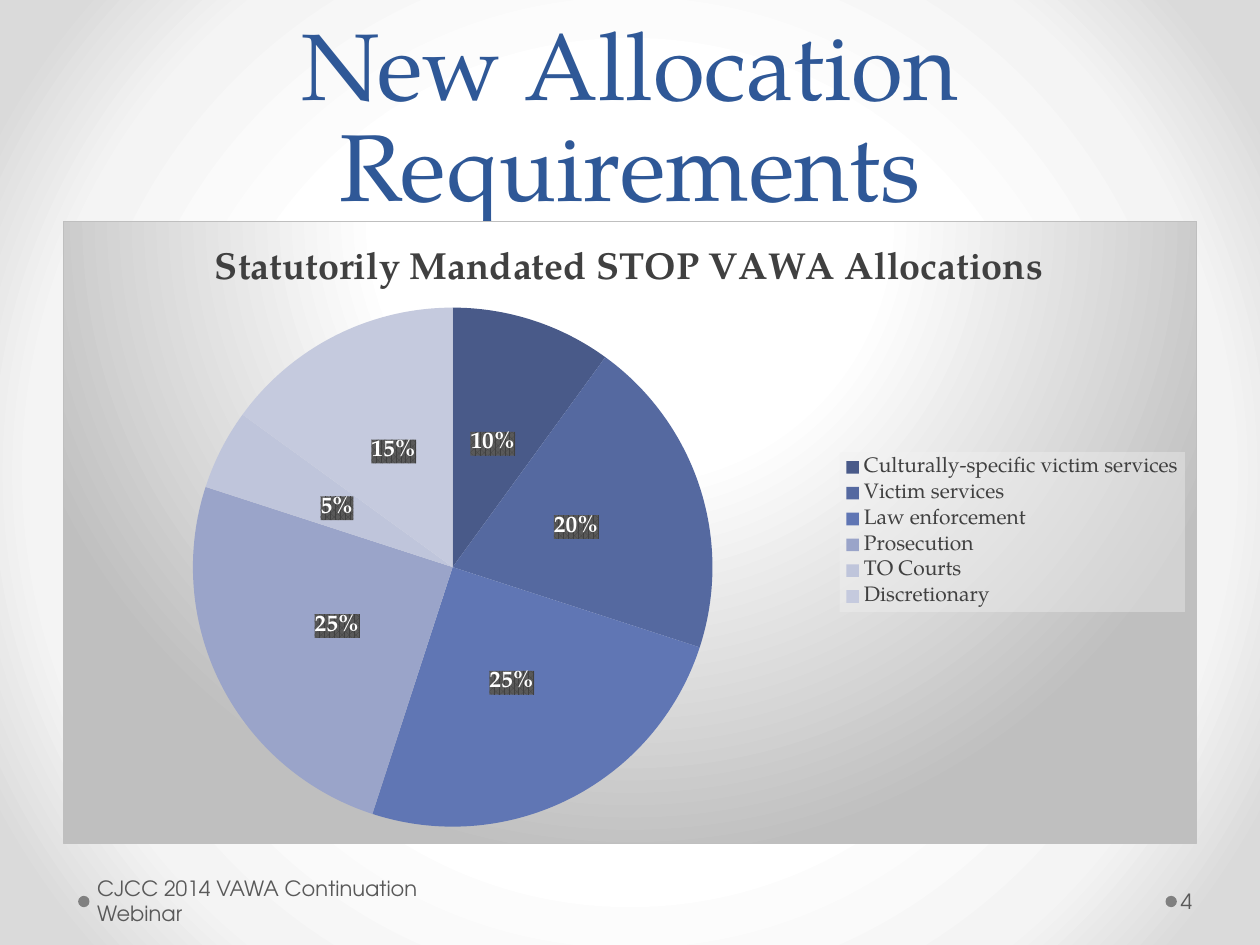
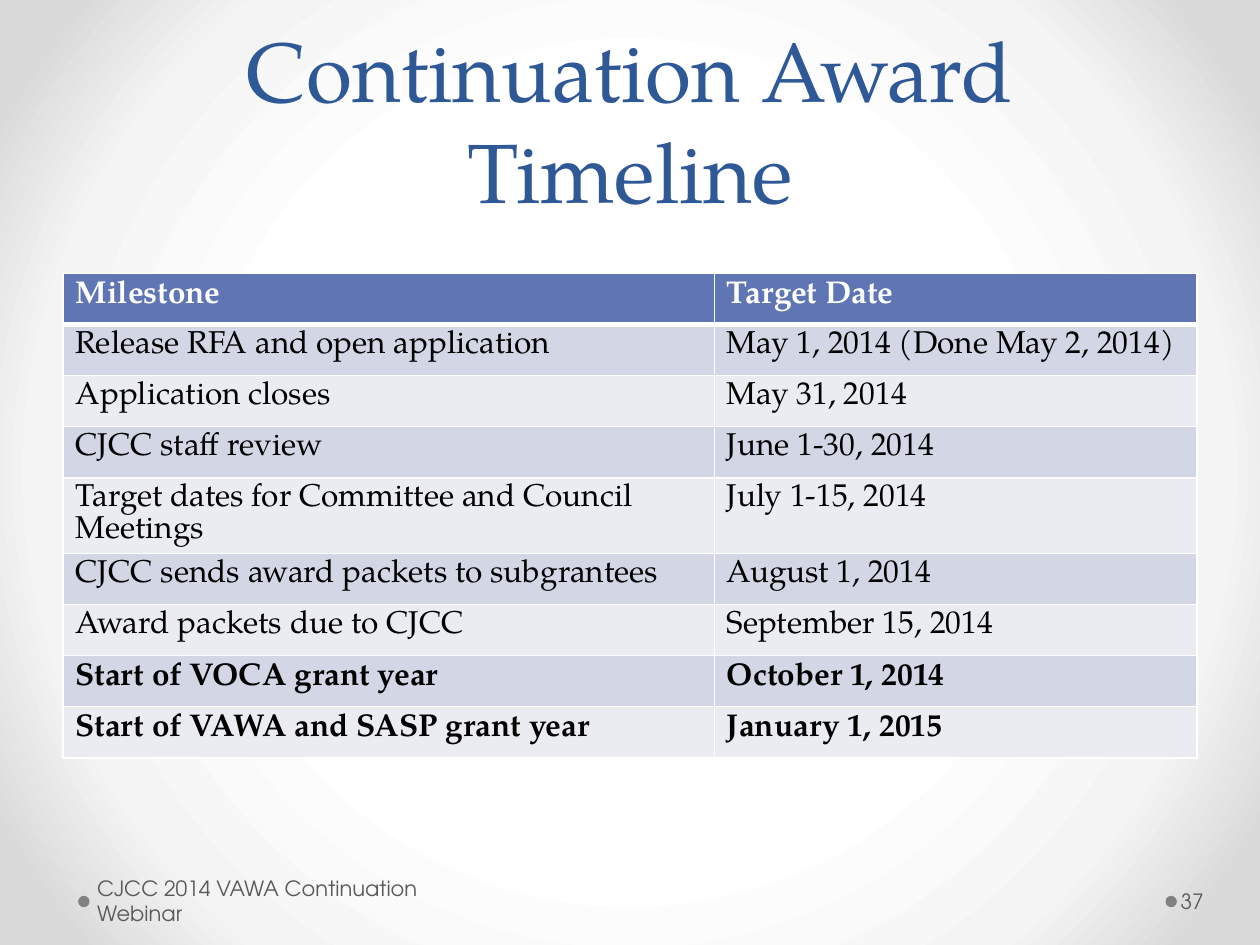
from lxml import etree
from pptx import Presentation
from pptx.chart.data import CategoryChartData
from pptx.dml.color import RGBColor
from pptx.enum.chart import XL_CHART_TYPE, XL_LABEL_POSITION, XL_LEGEND_POSITION
from pptx.enum.shapes import MSO_SHAPE
from pptx.enum.text import MSO_ANCHOR, PP_ALIGN
from pptx.oxml import parse_xml
from pptx.oxml.ns import nsdecls, qn
from pptx.util import Pt

PIE = XL_CHART_TYPE.PIE
LABEL_CENTER = XL_LABEL_POSITION.CENTER
LEGEND_RIGHT = XL_LEGEND_POSITION.RIGHT
ELLIPSE = MSO_SHAPE.OVAL
MIDDLE, BOTTOM = MSO_ANCHOR.MIDDLE, MSO_ANCHOR.BOTTOM
LEFT, CENTER = PP_ALIGN.LEFT, PP_ALIGN.CENTER

SERIF = "TeX Gyre Pagella"
SANS = "TeX Gyre Adventor"

WHITE = RGBColor(0xFF, 0xFF, 0xFF)
BLACK = RGBColor(0, 0, 0)
PALE_GRAY = RGBColor(0xF4, 0xF4, 0xF4)
EDGE_GRAY = RGBColor(0xDA, 0xDA, 0xDA)
LEGEND_GRAY = RGBColor(0xF2, 0xF2, 0xF2)
CHART_GRAY = RGBColor(0xBF, 0xBF, 0xBF)
DOT_GRAY = RGBColor(0x80, 0x80, 0x80)
FOOTER_GRAY = RGBColor(0x59, 0x59, 0x59)
DARK_GRAY = RGBColor(0x40, 0x40, 0x40)
TITLE_BLUE = RGBColor(0x2F, 0x58, 0x97)
HEADER_BLUE = RGBColor(0x60, 0x76, 0xB4)
BAND_DARK = RGBColor(0xD2, 0xD6, 0xE5)
BAND_LIGHT = RGBColor(0xEA, 0xEC, 0xF2)

FOOTER = "CJCC 2014 VAWA Continuation Webinar"
MARGIN = 36
CONTENT_WIDTH = 648

ALLOCATIONS = [
    ("Culturally-specific victim services", 10, RGBColor(0x49, 0x5A, 0x89)),
    ("Victim services", 20, RGBColor(0x55, 0x69, 0xA0)),
    ("Law enforcement", 25, HEADER_BLUE),
    ("Prosecution", 25, RGBColor(0x9A, 0xA4, 0xC9)),
    ("TO Courts", 5, RGBColor(0xBF, 0xC5, 0xDB)),
    ("Discretionary", 15, RGBColor(0xC5, 0xCA, 0xDE)),
]

MILESTONES = [
    ("Milestone", "Target Date"),
    ("Release RFA and open application", "May 1, 2014 (Done May 2, 2014)"),
    ("Application closes", "May 31, 2014"),
    ("CJCC staff review", "June 1-30, 2014"),
    ("Target dates for Committee and Council Meetings", "July 1-15, 2014"),
    ("CJCC sends award packets to subgrantees", "August 1, 2014"),
    ("Award packets due to CJCC", "September 15, 2014"),
    ("Start of VOCA grant year", "October 1, 2014"),
    ("Start of VAWA and SASP grant year", "January 1, 2015"),
]
BOLD_ROWS = (0, 7, 8)
WRAPPED_ROW = 4


def style_font(font, name, size, color, bold=False):
    font.name = name
    font.size = Pt(size)
    font.color.rgb = color
    font.bold = bold


def radial_gradient(stops, left, top, right, bottom):
    stop_xml = "".join(
        f'<a:gs pos="{position * 1000}"><a:srgbClr val="{color}"/></a:gs>'
        for position, color in stops
    )
    return (
        f'<a:gradFill {nsdecls("a")} rotWithShape="1"><a:gsLst>{stop_xml}</a:gsLst>'
        f'<a:path path="circle"><a:fillToRect l="{left * 1000}" t="{top * 1000}" '
        f'r="{right * 1000}" b="{bottom * 1000}"/></a:path></a:gradFill>'
    )


def set_background(master):
    master.background.fill.solid()
    properties = master.element.find(".//" + qn("p:bgPr"))
    solid_fill = properties.find(qn("a:solidFill"))
    stops = [(50, WHITE), (76, PALE_GRAY), (92, EDGE_GRAY)]
    properties.replace(solid_fill, parse_xml(radial_gradient(stops, 50, 50, 50, 50)))


def add_text(slide, text, box, font, anchor, insets, align=LEFT, line_spacing=None):
    shape = slide.shapes.add_textbox(*map(Pt, box))
    frame = shape.text_frame
    frame.word_wrap = True
    frame.vertical_anchor = anchor
    (frame.margin_left, frame.margin_top,
     frame.margin_right, frame.margin_bottom) = map(Pt, insets)
    paragraph = frame.paragraphs[0]
    paragraph.text = text
    paragraph.alignment = align
    if line_spacing:
        paragraph.line_spacing = Pt(line_spacing)
    style_font(paragraph.font, *font)


def add_dot(slide, left):
    dot = slide.shapes.add_shape(ELLIPSE, Pt(left), Pt(511.92), Pt(6.48), Pt(6.48))
    dot.shadow.inherit = False
    dot.fill.solid()
    dot.fill.fore_color.rgb = DOT_GRAY
    dot.line.fill.background()


def add_titled_slide(presentation, title, title_size, number):
    slide = presentation.slides.add_slide(presentation.slide_layouts[6])
    for left in (666, 44.64):
        add_dot(slide, left)
    add_text(slide, title, (MARGIN, 0, CONTENT_WIDTH, 126),
             (SERIF, title_size, TITLE_BLUE), BOTTOM, (7.2, 0, 7.2, 0), CENTER, 58)
    footer_font = (SANS, 12, FOOTER_GRAY)
    add_text(slide, FOOTER, (51.84, 500.4, 223.92, 28.8),
             footer_font, MIDDLE, (3.6, 3.6, 7.2, 3.6))
    add_text(slide, str(number), (672.48, 500.4, 43.92, 28.8),
             footer_font, MIDDLE, (2.16, 3.6, 3.6, 3.6))
    return slide


def shape_properties(content):
    return parse_xml(f'<c:spPr {nsdecls("c", "a")}>{content}</c:spPr>')


def manual_layout(x, y, width, height, inner=False):
    target = '<c:layoutTarget val="inner"/>' if inner else ""
    return parse_xml(
        f'<c:layout {nsdecls("c")}><c:manualLayout>{target}'
        f'<c:xMode val="edge"/><c:yMode val="edge"/><c:x val="{x}"/><c:y val="{y}"/>'
        f'<c:w val="{width}"/><c:h val="{height}"/></c:manualLayout></c:layout>'
    )


def remove_layout(parent):
    for layout in parent.findall(qn("c:layout")):
        parent.remove(layout)


def style_labels(plot):
    plot.has_data_labels = True
    labels = plot.data_labels
    labels.show_percentage = True
    labels.show_value = False
    labels.number_format = "0%"
    labels.number_format_is_linked = False
    labels.position = LABEL_CENTER
    style_font(labels.font, SERIF, 13.3, WHITE, True)


def style_chart_areas(chart):
    root = chart.element
    gradient = radial_gradient(
        [(0, WHITE), (39, WHITE), (100, CHART_GRAY)], 50, -80, 50, 180)
    root.find(qn("c:txPr")).addprevious(shape_properties(
        f'{gradient}<a:ln w="{Pt(0.75)}"><a:solidFill>'
        f'<a:srgbClr val="{CHART_GRAY}"/></a:solidFill></a:ln>'))

    plot_area = root.find(".//" + qn("c:plotArea"))
    remove_layout(plot_area)
    plot_area.insert(0, manual_layout(0.114, 0.139, 0.459, 0.834, inner=True))

    legend = root.find(".//" + qn("c:legend"))
    remove_layout(legend)
    overlay = legend.find(qn("c:overlay"))
    overlay.addprevious(manual_layout(0.685, 0.371, 0.305, 0.257))
    overlay.addnext(shape_properties(
        f'<a:solidFill><a:srgbClr val="{LEGEND_GRAY}"><a:alpha val="39000"/>'
        '</a:srgbClr></a:solidFill>'))

    label_text = root.find(".//" + qn("c:dLbls")).find(qn("c:txPr"))
    label_text.addprevious(shape_properties(
        f'<a:pattFill prst="pct75"><a:fgClr><a:srgbClr val="{DARK_GRAY}"/></a:fgClr>'
        f'<a:bgClr><a:srgbClr val="{FOOTER_GRAY}"/></a:bgClr></a:pattFill>'))


def add_allocation_pie(slide):
    data = CategoryChartData()
    data.categories = [name for name, _, _ in ALLOCATIONS]
    data.add_series("Series 1", [share for _, share, _ in ALLOCATIONS])
    chart = slide.shapes.add_chart(
        PIE, Pt(MARGIN), Pt(126), Pt(CONTENT_WIDTH), Pt(356.4), data).chart
    style_font(chart.font, SERIF, 10, BLACK)

    chart.has_title = True
    title = chart.chart_title
    title.include_in_layout = False
    title.text_frame.text = "Statutorily Mandated STOP VAWA Allocations"
    style_font(title.text_frame.paragraphs[0].font, SERIF, 21.6, DARK_GRAY, True)

    chart.has_legend = True
    chart.legend.position = LEGEND_RIGHT
    chart.legend.include_in_layout = False
    style_font(chart.legend.font, SERIF, 12, DARK_GRAY)

    plot = chart.plots[0]
    plot.vary_by_categories = True
    for index, (_, _, color) in enumerate(ALLOCATIONS):
        slice_format = plot.series[0].points[index].format
        slice_format.fill.solid()
        slice_format.fill.fore_color.rgb = color
        slice_format.line.fill.background()
    style_labels(plot)
    style_chart_areas(chart)


def set_borders(cell, top, bottom):
    properties = cell._tc.get_or_add_tcPr()
    widths = {"a:lnL": 1, "a:lnR": 1, "a:lnT": top, "a:lnB": bottom}
    for position, (tag, width) in enumerate(widths.items()):
        line = etree.Element(qn(tag), w=str(Pt(width)))
        fill = etree.SubElement(line, qn("a:solidFill"))
        etree.SubElement(fill, qn("a:srgbClr"), val=str(WHITE))
        properties.insert(position, line)


def fill_cell(cell, text, row):
    is_header = row == 0
    cell.fill.solid()
    band = BAND_DARK if row % 2 else BAND_LIGHT
    cell.fill.fore_color.rgb = HEADER_BLUE if is_header else band
    paragraph = cell.text_frame.paragraphs[0]
    paragraph.text = text
    paragraph.line_spacing = Pt(18)
    style_font(paragraph.font, SERIF, 18, WHITE if is_header else BLACK, row in BOLD_ROWS)
    set_borders(cell, top=3 if row == 1 else 1, bottom=3 if is_header else 1)


def add_milestone_table(slide):
    table = slide.shapes.add_table(
        len(MILESTONES), 2, Pt(MARGIN), Pt(156.24), Pt(CONTENT_WIDTH), Pt(276.8)).table
    for column, width in zip(table.columns, (372.24, 275.76)):
        column.width = Pt(width)
    for row, texts in enumerate(MILESTONES):
        table.rows[row].height = Pt(43.2 if row == WRAPPED_ROW else 29.2)
        for column, text in enumerate(texts):
            fill_cell(table.cell(row, column), text, row)


def main():
    presentation = Presentation()
    presentation.slide_width = Pt(720)
    presentation.slide_height = Pt(540)
    set_background(presentation.slide_master)

    allocation_slide = add_titled_slide(presentation, "New Allocation Requirements", 54, 4)
    add_allocation_pie(allocation_slide)

    timeline_slide = add_titled_slide(presentation, "Continuation Award Timeline", 48, 37)
    add_milestone_table(timeline_slide)

    presentation.save("out.pptx")


if __name__ == "__main__":
    main()
